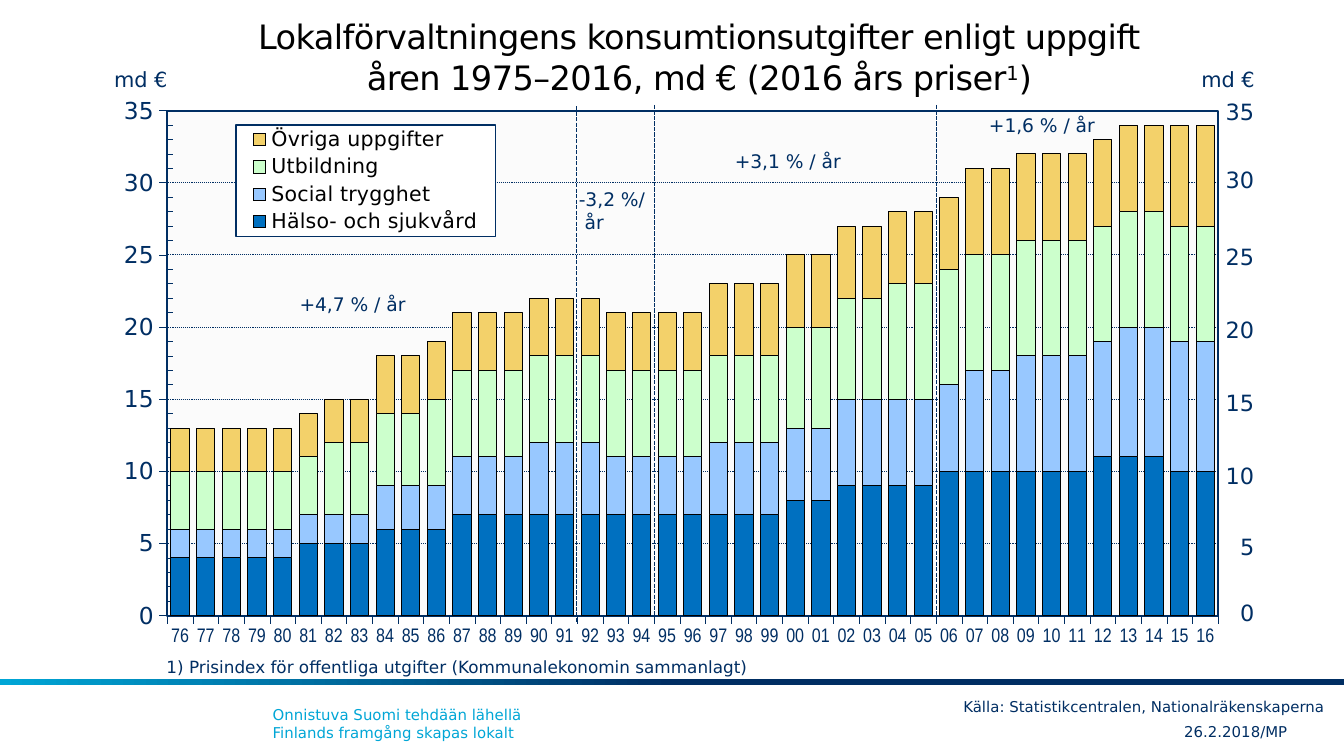
import copy

import lxml.etree
import pptx
import pptx.chart.data
import pptx.dml.color
import pptx.enum.chart
import pptx.enum.dml
import pptx.enum.shapes
import pptx.enum.text
import pptx.oxml
import pptx.oxml.ns
import pptx.util

Pt = pptx.util.Pt
qn = pptx.oxml.ns.qn
ALIGN = pptx.enum.text.PP_ALIGN
ANCHOR = pptx.enum.text.MSO_ANCHOR
DASH = pptx.enum.dml.MSO_LINE
TICK = pptx.enum.chart.XL_TICK_MARK

NAVY, CYAN, BLACK = "002E63", "00A6D6", "000000"
FONT = "DejaVu Sans"
YEARS = [f"{y % 100:02d}" for y in range(1976, 2017)]
SERIES = [
    ("Hälso- och sjukvård", "0070C0",
     [4, 4, 4, 4, 4, 5, 5, 5, 6, 6, 6, 7, 7, 7, 7, 7, 7, 7, 7, 7, 7,
      7, 7, 7, 8, 8, 9, 9, 9, 9, 10, 10, 10, 10, 10, 10, 11, 11, 11, 10, 10]),
    ("Social trygghet", "98C8FF",
     [2, 2, 2, 2, 2, 2, 2, 2, 3, 3, 3, 4, 4, 4, 5, 5, 5, 4, 4, 4, 4,
      5, 5, 5, 5, 5, 6, 6, 6, 6, 6, 7, 7, 8, 8, 8, 8, 9, 9, 9, 9]),
    ("Utbildning", "CCFFCC",
     [4, 4, 4, 4, 4, 4, 5, 5, 5, 5, 6, 6, 6, 6, 6, 6, 6, 6, 6, 6, 6,
      6, 6, 6, 7, 7, 7, 7, 8, 8, 8, 8, 8, 8, 8, 8, 8, 8, 8, 8, 8]),
    ("Övriga uppgifter", "F3D16A",
     [3, 3, 3, 3, 3, 3, 3, 3, 4, 4, 4, 4, 4, 4, 4, 4, 4, 4, 4, 4, 4,
      5, 5, 5, 5, 5, 5, 5, 5, 5, 5, 6, 6, 6, 6, 6, 6, 6, 6, 7, 7]),
]
# Tops of the right-hand scale labels, from 35 down to 0
SCALE_TOPS = [49, 85.7, 126.7, 165.6, 205.2, 244.1, 282.2, 317.5]
GROWTH = [(303, 97.2, 56.9, 32.4, "-3,2 %/\n år"),
          (153.4, 153.4, 75.6, 19.4, "+4,7 % / år"),
          (522.7, 57.6, 75.6, 19.4, "+1,6 % / år"),
          (386.6, 77, 75.6, 19.4, "+3,1 % / år")]


def rgb(value):
    return pptx.dml.color.RGBColor.from_string(value)


def set_font(font, size, color=NAVY, name=FONT, bold=False):
    font.size, font.name, font.bold = Pt(size), name, bold
    font.color.rgb = rgb(color)


def set_line(line, color=NAVY, width=0.75, dash=None):
    line.color.rgb = rgb(color)
    line.width = Pt(width)
    if dash is not None:
        line.dash_style = dash


def add_run(p, text, size, color, spacing=0, baseline=0):
    r = p.add_run()
    r.text = text
    set_font(r.font, size, color)
    props = r.font._element
    if spacing:
        props.set("spc", str(spacing))
    if baseline:
        props.set("baseline", str(baseline))
    return r


def add_text(slide, box, text, size=10, color=NAVY, align=None, anchor=ANCHOR.TOP,
             insets=(7.2, 3.6), wrap=False, spacing=0):
    """Add a text box; newlines part paragraphs, vertical tabs part lines."""
    tf = slide.shapes.add_textbox(*map(Pt, box)).text_frame
    tf.word_wrap = wrap
    tf.vertical_anchor = anchor
    tf.margin_left = tf.margin_right = Pt(insets[0])
    tf.margin_top = tf.margin_bottom = Pt(insets[1])
    for i, paragraph in enumerate(text.split("\n")):
        p = tf.add_paragraph() if i else tf.paragraphs[0]
        p.alignment = align
        for j, line in enumerate(paragraph.split("\v")):
            if j:
                p.add_line_break()
                p._p[-1].append(copy.deepcopy(r.font._element))
            r = add_run(p, line, size, color, spacing)
    return p


def add_divider(slide, x, y):
    s = slide.shapes.add_connector(pptx.enum.shapes.MSO_CONNECTOR.STRAIGHT,
                                   Pt(x), Pt(y), Pt(x), Pt(y + 276.5))
    set_line(s.line, dash=DASH.SQUARE_DOT)
    lxml.etree.SubElement(s._element.spPr, qn("a:effectLst"))


def add_band(slide):
    s = slide.shapes.add_shape(pptx.enum.shapes.MSO_SHAPE.RECTANGLE,
                               0, Pt(363.6), Pt(720), Pt(3.6))
    s.shadow.inherit = False
    s.line.fill.background()
    s.fill.gradient()
    s.fill.gradient_angle = 180
    for stop, position, color in zip(s.fill.gradient_stops, (0.5, 1), (NAVY, CYAN)):
        stop.position = position
        stop.color.rgb = rgb(color)


def chart_layout(x, y, w, h, inner=False):
    target = '<c:layoutTarget val="inner"/>' if inner else ""
    return pptx.oxml.parse_xml(
        f'<c:layout {pptx.oxml.ns.nsdecls("c")}><c:manualLayout>{target}'
        '<c:xMode val="edge"/><c:yMode val="edge"/>'
        f'<c:x val="{x}"/><c:y val="{y}"/><c:w val="{w}"/><c:h val="{h}"/>'
        '</c:manualLayout></c:layout>')


def chart_frame(fill, width):
    return pptx.oxml.parse_xml(
        f'<c:spPr {pptx.oxml.ns.nsdecls("c", "a")}>'
        f'<a:solidFill><a:srgbClr val="{fill}"/></a:solidFill>'
        f'<a:ln w="{Pt(width)}"><a:solidFill><a:srgbClr val="{NAVY}"/></a:solidFill></a:ln>'
        '</c:spPr>')


def drop_layout(element):
    for old in element.findall(qn("c:layout")):
        element.remove(old)


def format_axes(chart):
    cat, val = chart.category_axis, chart.value_axis
    for axis, size, name in ((cat, 10.5, "Arial Narrow"), (val, 12.5, FONT)):
        set_font(axis.tick_labels.font, size, name=name)
        set_line(axis.format.line, width=0.31)
        axis.major_tick_mark = TICK.OUTSIDE
    skip = lxml.etree.Element(qn("c:tickLblSkip"), val="1")
    cat._element.find(qn("c:noMultiLvlLbl")).addprevious(skip)
    cat._element.find(qn("c:txPr")).find(qn("a:bodyPr")).set("rot", "0")
    val.minimum_scale, val.maximum_scale = 0, 35
    val.major_unit, val.minor_unit = 5, 1
    val.minor_tick_mark = TICK.INSIDE
    val.tick_labels.number_format = "0"
    val.tick_labels.number_format_is_linked = False
    val.has_major_gridlines = True
    set_line(val.major_gridlines.format.line, width=0.5, dash=DASH.ROUND_DOT)


def format_legend(chart):
    chart.has_legend = True
    legend = chart.legend
    legend.position = pptx.enum.chart.XL_LEGEND_POSITION.RIGHT
    legend.include_in_layout = True
    set_font(legend.font, 11, BLACK)
    element = legend._element
    drop_layout(element)
    element.find(qn("c:legendPos")).addnext(chart_layout(0.12, 0.05, 0.23, 0.2))
    element.find(qn("c:txPr")).addprevious(chart_frame("FFFFFF", 0.75))


def add_spending_chart(slide):
    data = pptx.chart.data.CategoryChartData(number_format="0")
    data.categories = YEARS
    for name, _, values in SERIES:
        data.add_series(name, values)
    chart = slide.shapes.add_chart(pptx.enum.chart.XL_CHART_TYPE.COLUMN_STACKED,
                                   Pt(54), Pt(51.8), Pt(604.1), Pt(298.1), data).chart
    chart.has_title = False
    set_font(chart.font, 22.5, name="Arial", bold=True)
    plot = chart.plots[0]
    plot.gap_width, plot.overlap, plot.vary_by_categories = 40, 100, False
    for series, (_, color, _) in zip(plot.series, SERIES):
        series.format.fill.solid()
        series.format.fill.fore_color.rgb = rgb(color)
        set_line(series.format.line, BLACK, 0.5)
    format_axes(chart)
    format_legend(chart)
    area = chart._chartSpace.chart.plotArea
    drop_layout(area)
    area.insert(0, chart_layout(0.059, 0.024, 0.932, 0.909, inner=True))
    area.append(chart_frame("FBFBFB", 1))


def main():
    prs = pptx.Presentation()
    prs.slide_width, prs.slide_height = Pt(720), Pt(405)
    slide = prs.slides.add_slide(prs.slide_layouts[6])
    add_band(slide)
    add_text(slide, (139, 374.4, 470.9, 26.6),
             "Onnistuva Suomi tehdään lähellä\vFinlands framgång skapas lokalt",
             size=8, color=CYAN, wrap=True)
    add_spending_chart(slide)
    for x in (54, 636.5):
        add_text(slide, (x, 32.4, 43.9, 20.9), "md €", size=11.2)
    for i, top in enumerate(SCALE_TOPS):
        label = str(35 - 5 * i)
        width = 22.3 if len(label) == 1 else 30.2
        add_text(slide, (679 - width, top, width, 21.6), label, size=12, align=ALIGN.RIGHT)
    for x, y in ((308.9, 56.9), (350.6, 56.2), (501.8, 56.2)):
        add_divider(slide, x, y)
    for *box, label in GROWTH:
        add_text(slide, box, label)
    add_text(slide, (626.4, 383.8, 71.3, 15.8), "26.2.2018/MP", size=8,
             align=ALIGN.CENTER, anchor=ANCHOR.MIDDLE, insets=(0, 0), wrap=True)
    title = add_text(slide, (87.8, 4.3, 573.8, 51.1),
                     "Lokalförvaltningens konsumtionsutgifter enligt uppgift\v"
                     "åren 1975–2016, md € (2016 års priser",
                     size=18, color=BLACK, align=ALIGN.CENTER, anchor=ANCHOR.BOTTOM,
                     insets=(0, 3.6), wrap=True, spacing=-30)
    add_run(title, "1", 18, BLACK, spacing=-30, baseline=30000)
    add_run(title, ")", 18, BLACK, spacing=-30)
    add_text(slide, (82.1, 348.5, 332.6, 18),
             "1) Prisindex för offentliga utgifter (Kommunalekonomin sammanlagt)", size=9)
    add_text(slide, (509, 370.1, 211, 17.3),
             "Källa: Statistikcentralen, Nationalräkenskaperna", size=8)
    prs.save("out.pptx")


if __name__ == "__main__":
    main()
